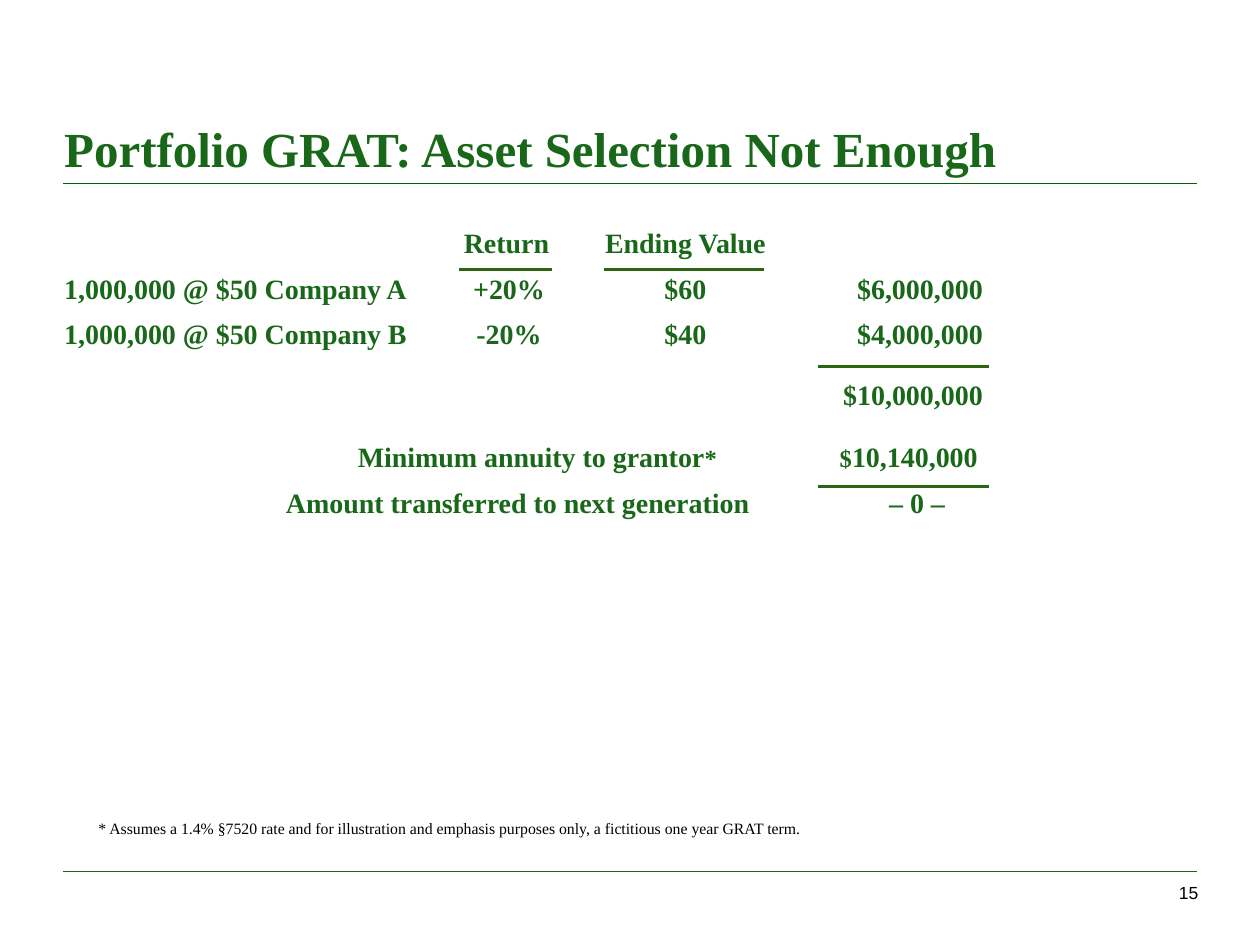
import pptx
import pptx.util
import pptx.dml.color
import pptx.enum.shapes
import pptx.enum.text
from lxml import etree

Inches, Pt = pptx.util.Inches, pptx.util.Pt
ALIGN = pptx.enum.text.PP_ALIGN
ANCHOR = pptx.enum.text.MSO_ANCHOR
GREEN, BLACK, SERIF = "196819", "000000", "Times New Roman"

# Content
TITLE = "Portfolio GRAT: Asset Selection Not Enough"
FOOTNOTE = ("* Assumes a 1.4% §7520 rate and for illustration and emphasis "
            "purposes only, a fictitious one year GRAT term.")
PAGE = "15"

# Tab stops, in inches from the text edge of the table
RETURN, ENDING, AMOUNT = ("ctr", 3.53), ("ctr", 4.93), ("r", 7.29)

# Table rows: height, tab stops, text
ROWS = [
    (0.37, [("ctr", 3.51), ENDING], "\tReturn\tEnding Value"),
    (0.36, [RETURN, ENDING, AMOUNT],
     "1,000,000 @ $50 Company A\t+20%\t$60\t$6,000,000"),
    (0.36, [RETURN, ENDING, AMOUNT],
     "1,000,000 @ $50 Company B\t-20%\t$40\t$4,000,000"),
    (0.6, [AMOUNT], "\t$10,000,000"),
    (0.39, [("l", 2.33), ("r", 7.25)],
     [("\tMinimum annuity to grantor", 16), ("*\t$", 14),
      ("10,140,000", 16)]),
    (0.35, [("l", 1.76), ("r", 6.99)],
     "\tAmount transferred to next generation\t– 0 –"),
]

# Rules: left, right, height on the slide, colour, width
RULES = [
    (0.5, 9.5, 1.46, "006600", 0.5),
    (0.5, 9.5, 6.92, GREEN, 0.5),
    (3.64, 4.38, 2.14, "2D6411", 1.5),
    (4.79, 6.06, 2.14, "2D6411", 1.5),
    (6.49, 7.85, 2.91, "2D6411", 1.5),
    (6.49, 7.85, 3.86, "2D6411", 1.5),
]


def rgb(value):
    return pptx.dml.color.RGBColor.from_string(value)


def add_tabs(p, stops):
    qn = pptx.oxml.ns.qn
    tabs = etree.SubElement(p._p.get_or_add_pPr(), qn("a:tabLst"))
    for align, position in stops:
        etree.SubElement(tabs, qn("a:tab"), pos=str(Inches(position)),
                         algn=align)


def write(tf, content, size, color, bold=False, font=SERIF, align=ALIGN.LEFT,
          stops=()):
    p = tf.paragraphs[0]
    p.alignment = align
    if stops:
        add_tabs(p, stops)
    p.font.size, p.font.bold, p.font.name = Pt(size), bold, font
    p.font.color.rgb = rgb(color)
    runs = [(content, size)] if isinstance(content, str) else content
    for text, run_size in runs:
        r = p.add_run()
        r.text = text
        if run_size != size:
            r.font.size = Pt(run_size)


def add_text(s, box, content, *style, inset=(0, 0), anchor=ANCHOR.TOP, **kw):
    tf = s.shapes.add_textbox(*map(Inches, box)).text_frame
    tf.word_wrap = True
    tf.vertical_anchor = anchor
    tf.margin_left = tf.margin_right = Inches(inset[0])
    tf.margin_top = tf.margin_bottom = Inches(inset[1])
    write(tf, content, *style, **kw)


def add_rule(s, left, right, y, color, width):
    line = s.shapes.add_connector(
        pptx.enum.shapes.MSO_CONNECTOR.STRAIGHT,
        *map(Inches, (left, y, right, y)))
    line.line.color.rgb = rgb(color)
    line.line.width = Pt(width)
    etree.SubElement(line._element.spPr, pptx.oxml.ns.qn("a:effectLst"))


def add_grat_table(s, left, top, width):
    total = sum(height for height, _, _ in ROWS)
    table = s.shapes.add_table(
        len(ROWS), 1, *map(Inches, (left, top, width, total))).table
    table.first_row = table.horz_banding = False
    for i, (height, stops, content) in enumerate(ROWS):
        table.rows[i].height = Inches(height)
        cell = table.cell(i, 0)
        cell.fill.background()
        cell.vertical_anchor = ANCHOR.MIDDLE
        cell.margin_top = cell.margin_bottom = 0
        cell.margin_left = cell.margin_right = Inches(0.09)
        write(cell.text_frame, content, 16, GREEN, True, stops=stops)


prs = pptx.Presentation()
prs.slide_width, prs.slide_height = Inches(10), Inches(7.5)
s = prs.slides.add_slide(prs.slide_layouts[6])

# Title, table, rules
add_text(s, (0.51, 0.87, 8.49, 0.54), TITLE, 28, GREEN, True,
         anchor=ANCHOR.BOTTOM)
add_grat_table(s, 0.42, 1.75, 9.04)
for rule in RULES:
    add_rule(s, *rule)

# Footnote and page number
add_text(s, (0.69, 6.45, 8.19, 0.39), FOOTNOTE, 9, BLACK, inset=(0.09, 0.05))
add_text(s, (8.76, 7, 0.75, 0.28), PAGE, 10, BLACK, font="Arial",
         align=ALIGN.RIGHT)

prs.save("out.pptx")
